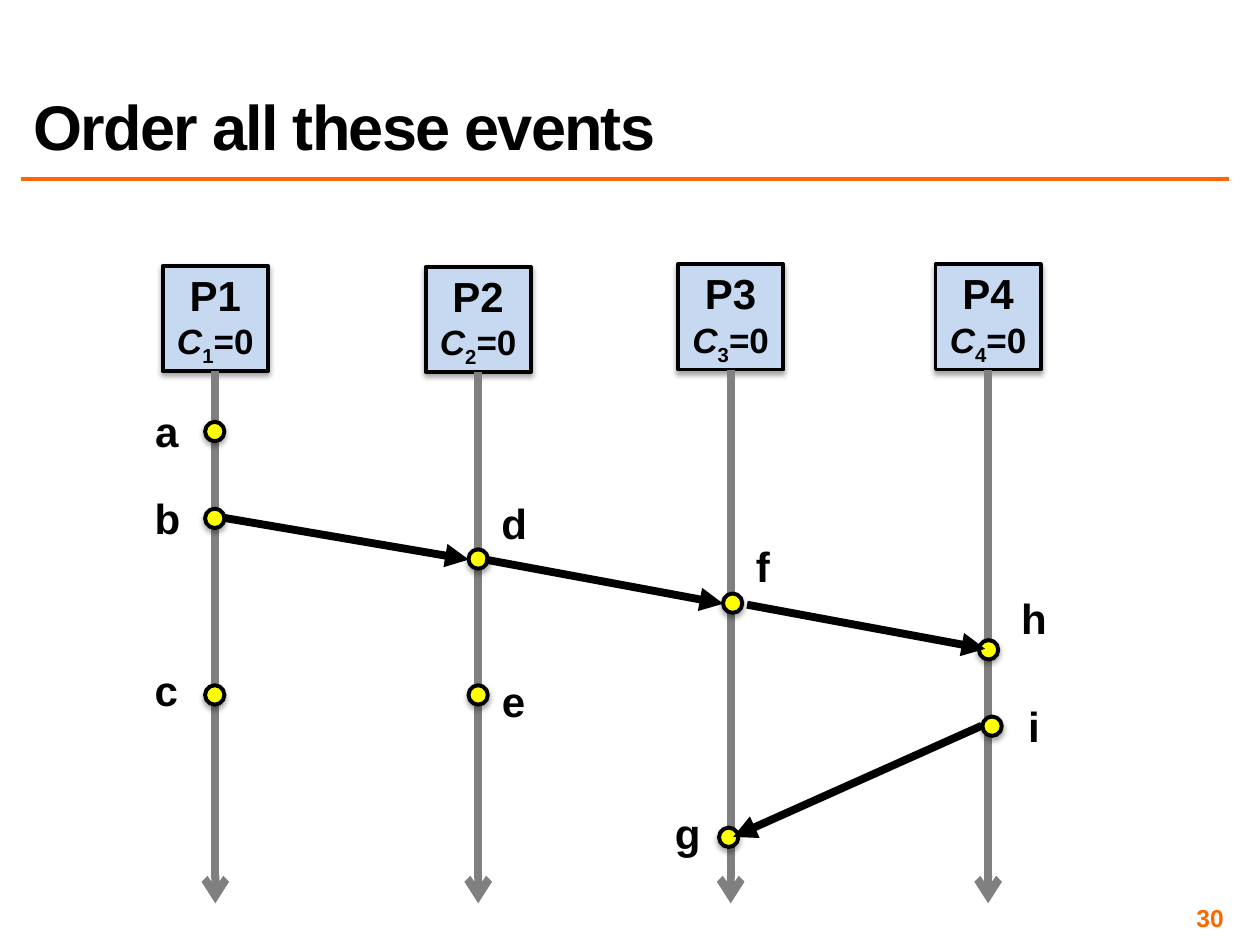
from dataclasses import dataclass

from lxml import etree
from pptx import Presentation
from pptx.dml.color import RGBColor
from pptx.enum.shapes import MSO_CONNECTOR, MSO_SHAPE
from pptx.enum.text import MSO_ANCHOR, MSO_AUTO_SIZE, PP_ALIGN
from pptx.oxml.ns import qn
from pptx.util import Cm, Pt

STRAIGHT = MSO_CONNECTOR.STRAIGHT
PROCESS_BOX, OVAL = MSO_SHAPE.FLOWCHART_PROCESS, MSO_SHAPE.OVAL
MIDDLE, BOTTOM = MSO_ANCHOR.MIDDLE, MSO_ANCHOR.BOTTOM
LEFT, CENTER, RIGHT = PP_ALIGN.LEFT, PP_ALIGN.CENTER, PP_ALIGN.RIGHT
FIT_SHAPE = MSO_AUTO_SIZE.SHAPE_TO_FIT_TEXT

FONT = "Arial"
COLORS = {
    "accent": "FF6600",
    "ink": "000000",
    "lifeline": "808080",
    "process": "C6D9F1",
    "event": "FFFF00",
}
BOX_SIZE = 2.12
EVENT_SIZE = 0.39
LABEL_HEIGHT = 1.27
LIFELINE_END = 18.21
BOTTOM_SIDE = 2


@dataclass
class Process:
    number: int
    center: float
    top: float


@dataclass
class Event:
    name: str
    x: float
    y: float
    label_left: float
    label_top: float
    label_width: float
    wrap: bool = False


@dataclass
class Message:
    x1: float
    y1: float
    x2: float
    y2: float


PROCESSES = [
    Process(1, 4.34, 5.36),
    Process(2, 9.64, 5.38),
    Process(3, 14.73, 5.33),
    Process(4, 19.92, 5.33),
]
EVENTS = [
    Event("a", 4.33, 8.7, 2.87, 8.05, 0.99),
    Event("b", 4.33, 10.45, 2.87, 9.8, 0.99),
    Event("c", 4.33, 14.01, 2.87, 13.28, 0.94),
    Event("d", 9.64, 11.27, 9.86, 9.91, 0.99),
    Event("e", 9.64, 14.01, 9.86, 13.49, 0.99),
    Event("f", 14.77, 12.16, 14.99, 10.77, 0.74),
    Event("g", 14.69, 16.88, 13, 16.15, 1.73, True),
    Event("h", 19.93, 13.1, 20.12, 11.81, 1.45, True),
    Event("i", 20, 14.64, 20.12, 14, 1.45, True),
]
MESSAGES = [
    Message(4.52, 10.44, 9.45, 11.28),
    Message(9.78, 11.28, 14.58, 12.17),
    Message(15.06, 12.19, 19.86, 13.08),
    Message(19.79, 14.63, 14.78, 16.87),
]


def color(name: str) -> RGBColor:
    return RGBColor.from_string(COLORS[name])


def style_font(paragraph, size: float, color_name: str = "ink") -> None:
    font = paragraph.font
    font.name, font.size, font.bold = FONT, Pt(size), True
    font.color.rgb = color(color_name)


def add_shadow(shape) -> None:
    effects = etree.SubElement(shape._element.spPr, qn("a:effectLst"))
    shadow = etree.SubElement(
        effects, qn("a:outerShdw"), blurRad=str(Pt(3.1)), dist=str(Pt(1.8)),
        dir="5400000", rotWithShape="0",
    )
    shadow_color = etree.SubElement(shadow, qn("a:srgbClr"), val=COLORS["ink"])
    etree.SubElement(shadow_color, qn("a:alpha"), val="35000")


def add_figure(slide, kind, left: float, top: float, size: float, fill: str):
    shape = slide.shapes.add_shape(kind, Cm(left), Cm(top), Cm(size), Cm(size))
    shape.fill.solid()
    shape.fill.fore_color.rgb = color(fill)
    shape.line.color.rgb = color("ink")
    shape.line.width = Pt(2.25)
    add_shadow(shape)
    return shape


def add_line(slide, start: tuple[float, float], end: tuple[float, float],
             color_name: str, width: float, head: str = "none"):
    connector = slide.shapes.add_connector(
        STRAIGHT, *(Cm(value) for value in start + end))
    connector.line.color.rgb = color(color_name)
    connector.line.width = Pt(width)
    etree.SubElement(connector.line._get_or_add_ln(), qn("a:tailEnd"), type=head)
    etree.SubElement(connector._element.spPr, qn("a:effectLst"))
    return connector


def add_text(slide, text: str, left: float, top: float, width: float, height: float,
             size: float, alignment=CENTER, color_name: str = "ink", wrap: bool = True):
    box = slide.shapes.add_textbox(Cm(left), Cm(top), Cm(width), Cm(height))
    box.text_frame.word_wrap = wrap
    paragraph = box.text_frame.paragraphs[0]
    paragraph.text = text
    paragraph.alignment = alignment
    style_font(paragraph, size, color_name)
    return box


def add_process(slide, process: Process) -> None:
    box = add_figure(slide, PROCESS_BOX, process.center - BOX_SIZE / 2, process.top,
                     BOX_SIZE, "process")
    frame = box.text_frame
    frame.vertical_anchor = MIDDLE
    name, clock = frame.paragraphs[0], frame.add_paragraph()
    name.text = f"P{process.number}"
    for paragraph, size in ((name, 24), (clock, 20)):
        paragraph.alignment = CENTER
        style_font(paragraph, size)
    letter, index, value = (clock.add_run() for _ in range(3))
    letter.text, index.text, value.text = "C", str(process.number), "=0"
    letter.font.italic = True
    index._r.get_or_add_rPr().set("baseline", "-25000")

    lifeline = add_line(slide, (process.center, process.top + BOX_SIZE),
                        (process.center, LIFELINE_END), "lifeline", 4.5, "arrow")
    lifeline.begin_connect(box, BOTTOM_SIDE)


def add_event(slide, event: Event) -> None:
    add_figure(slide, OVAL, event.x - EVENT_SIZE / 2, event.y - EVENT_SIZE / 2,
               EVENT_SIZE, "event")
    label = add_text(slide, event.name, event.label_left, event.label_top,
                     event.label_width, LABEL_HEIGHT, 24, wrap=event.wrap)
    label.text_frame.auto_size = FIT_SHAPE


def add_title(slide, text: str) -> None:
    title = add_text(slide, text, 0.43, 0.43, 24.33, 2.97, 36, LEFT)
    title.text_frame.vertical_anchor = BOTTOM
    paragraph = title.text_frame.paragraphs[0]
    paragraph.line_spacing = 0.8
    paragraph.runs[0]._r.get_or_add_rPr().set("spc", "-100")


def add_page_number(slide, text: str) -> None:
    frame = add_text(slide, text, 18.85, 18.21, 5.92, 0.58, 14, RIGHT, "accent").text_frame
    frame.vertical_anchor = MIDDLE
    frame.margin_left = frame.margin_right = Cm(0.1)
    frame.margin_top = frame.margin_bottom = Cm(0.1)


def main() -> None:
    presentation = Presentation()
    presentation.slide_width, presentation.slide_height = Cm(25.4), Cm(19.05)
    slide = presentation.slides.add_slide(presentation.slide_layouts[6])
    add_line(slide, (0.43, 3.61), (24.77, 3.61), "accent", 2)
    add_page_number(slide, "30")
    add_title(slide, "Order all these events")
    for process in PROCESSES:
        add_process(slide, process)
    for event in EVENTS:
        add_event(slide, event)
    for message in MESSAGES:
        add_line(slide, (message.x1, message.y1), (message.x2, message.y2),
                 "ink", 4.5, "triangle")
    presentation.save("out.pptx")


if __name__ == "__main__":
    main()
